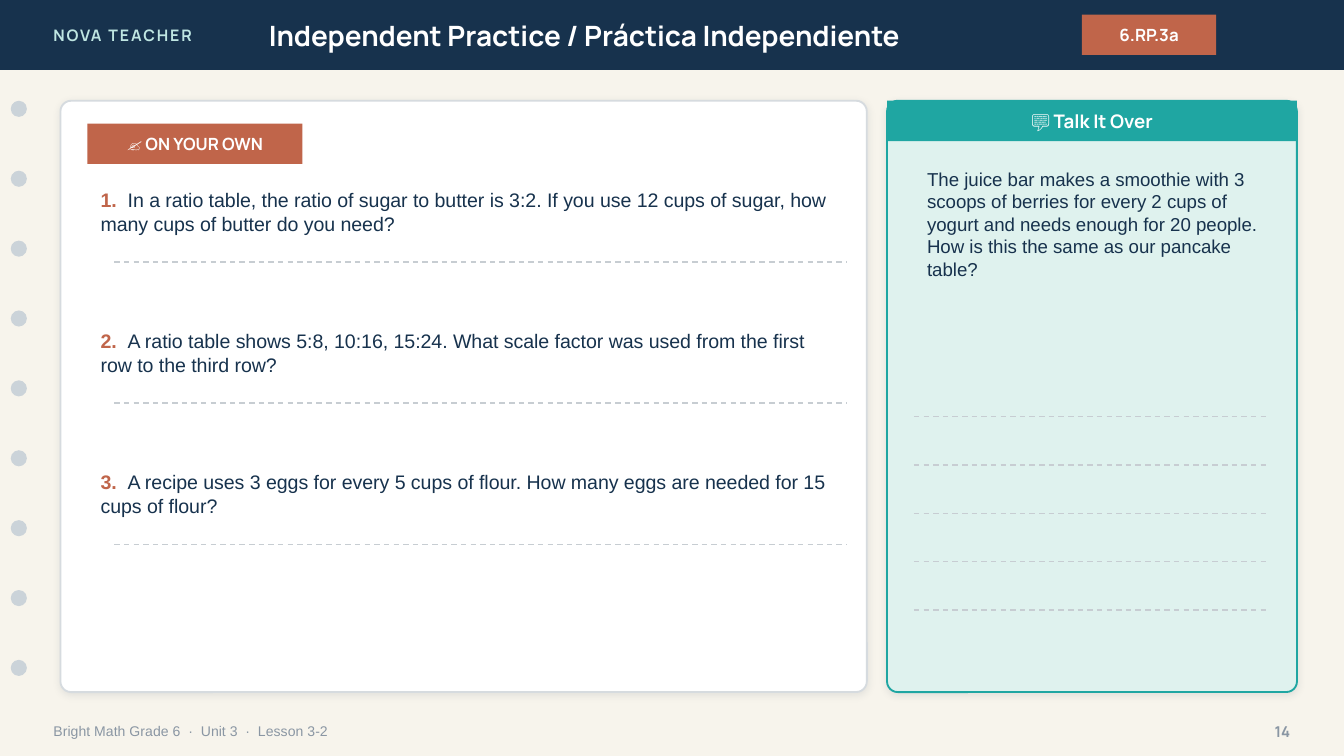
"""Build the independent practice slide of a ratio lesson."""
from lxml import etree
from pptx import Presentation
from pptx.dml.color import RGBColor
from pptx.enum.dml import MSO_LINE
from pptx.enum.shapes import MSO_CONNECTOR, MSO_SHAPE
from pptx.enum.text import MSO_ANCHOR, MSO_AUTO_SIZE, PP_ALIGN
from pptx.oxml import parse_xml
from pptx.oxml.ns import nsdecls, qn
from pptx.util import Inches, Pt

NAVY, CLAY, TEAL, WHITE = "17324D", "C0654A", "1FA6A2", "FFFFFF"
GREY, RULE = "8A96A3", "C7CDD2"
color = RGBColor.from_string

deck = Presentation()
deck.slide_width, deck.slide_height = Inches(10), Inches(10 * 9 / 16)
page = deck.slides.add_slide(deck.slide_layouts[5])
page.background.fill.solid()
page.background.fill.fore_color.rgb = color("F7F4EC")


def add_panel(kind, left, top, width, height, fill):
    """Add a filled shape without outline or shadow."""
    panel = page.shapes.add_shape(kind, Inches(left), Inches(top), Inches(width), Inches(height))
    panel.shadow.inherit = False
    panel.fill.solid()
    panel.fill.fore_color.rgb = color(fill)
    panel.line.fill.background()
    return panel


def write(box, spans, size, font="Manrope", align=PP_ALIGN.LEFT, anchor=MSO_ANCHOR.MIDDLE):
    """Fill a box with one paragraph of (text, colour, bold) spans."""
    frame = box.text_frame
    frame.word_wrap = True
    frame.auto_size = MSO_AUTO_SIZE.NONE
    frame.vertical_anchor = anchor
    paragraph = frame.paragraphs[0]
    paragraph.alignment = align
    for text, ink, bold in spans:
        span = paragraph.add_run()
        span.text = text
        span.font.name, span.font.size, span.font.bold = font, Pt(size), bold
        span.font.color.rgb = color(ink)
    return paragraph


header = add_panel(MSO_SHAPE.RECTANGLE, 0, 0, 10, 0.52, NAVY)
title = page.shapes.title
title.left, title.top, title.width, title.height = Inches(1.9), Inches(0), Inches(5.6), Inches(0.52)
write(title, [("Independent Practice / Práctica Independiente", WHITE, True)], 15)
header.element.addnext(title.element)

brand = page.shapes.add_textbox(Inches(0.3), Inches(0), Inches(2.4), Inches(0.52))
label = write(brand, [("NOVA TEACHER", "BFE6E2", True)], 8.5)
label.runs[0].font._element.set("spc", "100")

for row in range(9):
    add_panel(MSO_SHAPE.OVAL, 0.08, 0.75 + 0.52 * row, 0.12, 0.12, "CBD3D9")

footer = page.shapes.add_textbox(Inches(0.3), Inches(5.3), Inches(7), Inches(0.28))
write(footer, [("Bright Math Grade 6  ·  Unit 3  ·  Lesson 3-2", GREY, False)], 7.5, "Arial")
number = page.shapes.add_textbox(Inches(9.2), Inches(5.3), Inches(0.5), Inches(0.28))
write(number, [("14", GREY, True)], 8, align=PP_ALIGN.RIGHT)

for left, width, radius, fill, outline in [
    (0.45, 6, 0.018, WHITE, "D6DBDF"),
    (6.6, 3.05, 0.026, "DFF2EE", TEAL),
]:
    card = add_panel(MSO_SHAPE.ROUNDED_RECTANGLE, left, 0.75, width, 4.4, fill)
    card.adjustments[0] = radius
    card.line.color.rgb = color(outline)
    card.line.width = Pt(1)
    card.element.spPr.find(qn("a:effectLst")).append(parse_xml(
        f'<a:outerShdw {nsdecls("a")} blurRad="{Pt(4)}" dist="{Pt(1)}" dir="5400000" '
        'algn="bl" rotWithShape="0"><a:srgbClr val="1C2E42"><a:alpha val="10000"/>'
        '</a:srgbClr></a:outerShdw>'))

for text, left, top, width, fill, size in [
    ("6.RP.3a", 8.05, 0.11, 1, CLAY, 9),
    ("✍️ ON YOUR OWN", 0.65, 0.92, 1.6, CLAY, 9),
    ("💬 Talk It Over", 6.6, 0.75, 3.05, TEAL, 10),
]:
    tag = add_panel(MSO_SHAPE.RECTANGLE, left, top, width, 0.3, fill)
    write(tag, [(text, WHITE, True)], size, align=PP_ALIGN.CENTER)

questions = [
    "In a ratio table, the ratio of sugar to butter is 3:2. If you use 12 cups of sugar, "
    "how many cups of butter do you need?",
    "A ratio table shows 5:8, 10:16, 15:24. What scale factor was used from the first row "
    "to the third row?",
    "A recipe uses 3 eggs for every 5 cups of flour. How many eggs are needed for 15 cups "
    "of flour?",
]
answer_lines = []
for index, question in enumerate(questions):
    top = 1.35 + 1.05 * index
    box = page.shapes.add_textbox(Inches(0.65), Inches(top), Inches(5.65), Inches(0.5))
    write(box, [(f"{index + 1}.  ", CLAY, True), (question, NAVY, False)], 10.5, "Arial",
          anchor=MSO_ANCHOR.TOP)
    answer_lines.append((0.85, 6.3, top + 0.6))

prompt = page.shapes.add_textbox(Inches(6.8), Inches(1.2), Inches(2.7), Inches(1.7))
write(prompt, [(
    "The juice bar makes a smoothie with 3 scoops of berries for every 2 cups of yogurt "
    "and needs enough for 20 people. How is this the same as our pancake table?",
    NAVY, False)], 10, "Arial", anchor=MSO_ANCHOR.TOP)
answer_lines += [(6.8, 9.45, 3.1 + 0.36 * row) for row in range(5)]

for start, end, height in answer_lines:
    line = page.shapes.add_connector(
        MSO_CONNECTOR.STRAIGHT, Inches(start), Inches(height), Inches(end), Inches(height))
    line.line.color.rgb = color(RULE)
    line.line.width = Pt(0.75)
    line.line.dash_style = MSO_LINE.DASH
    etree.SubElement(line.element.spPr, qn("a:effectLst"))

deck.save("out.pptx")
